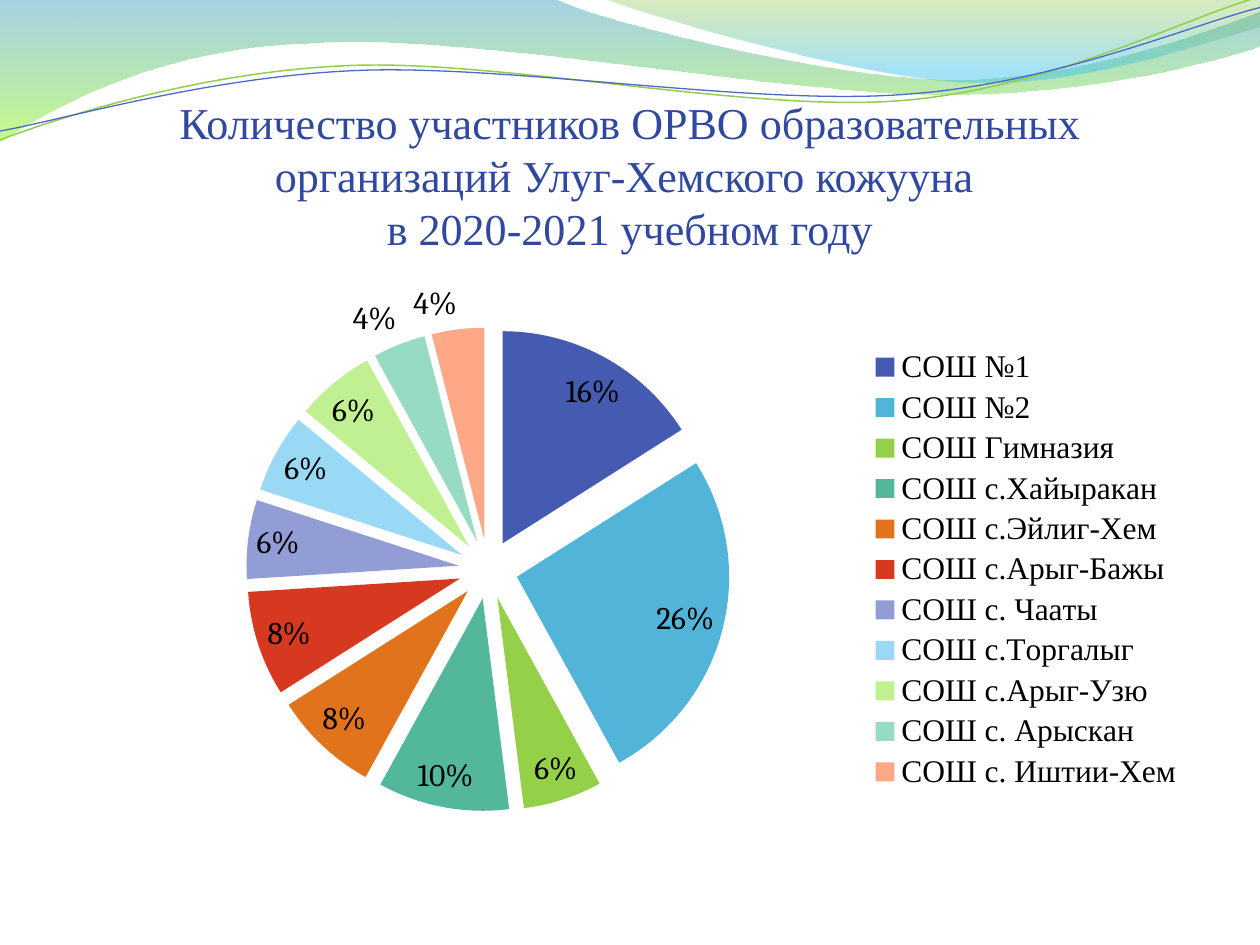
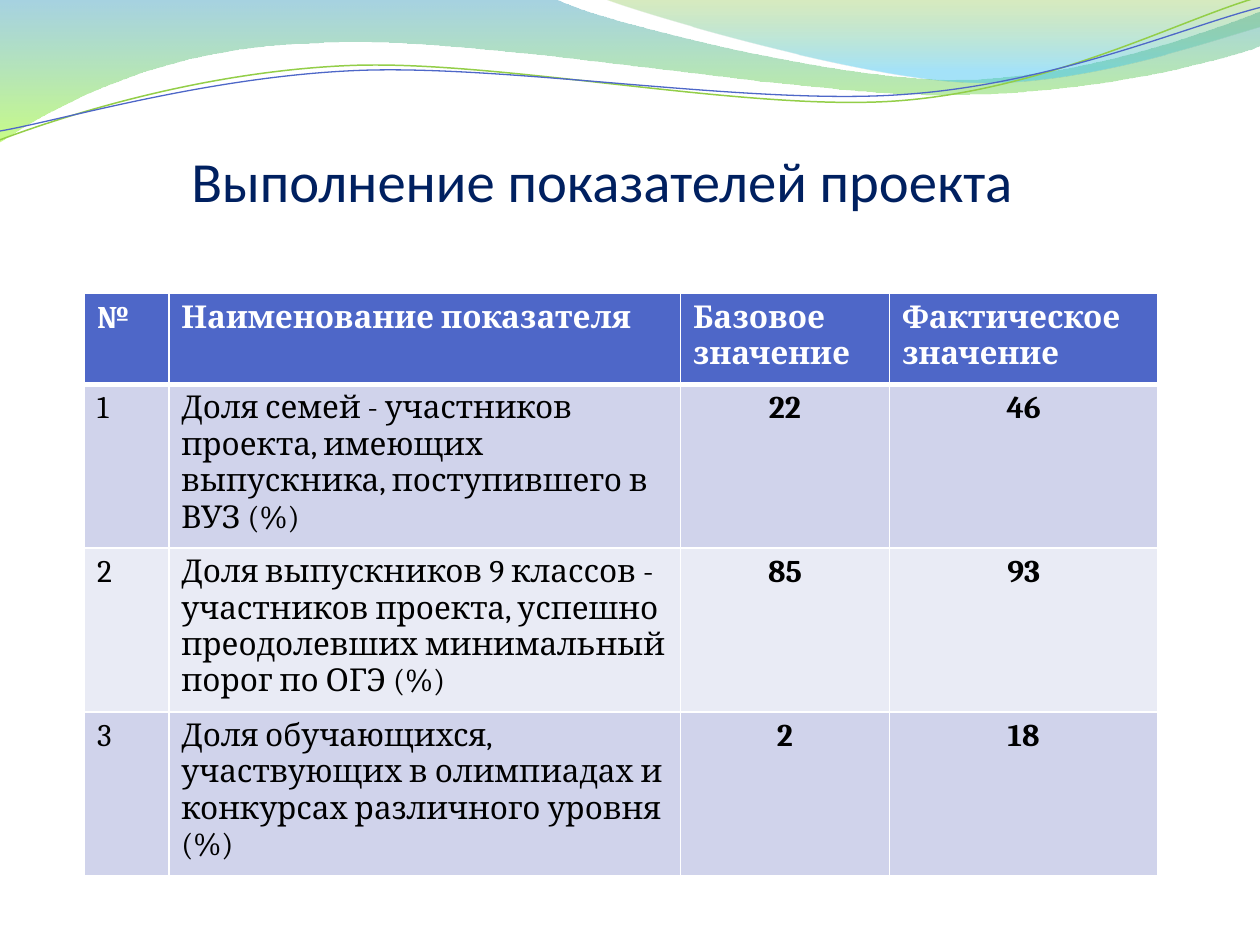
"""Builds two slides on school project results: a pie chart and a table."""
from math import cos, radians, sin
from pptx import Presentation
from pptx.chart.data import CategoryChartData
from pptx.dml.color import RGBColor
from pptx.enum.chart import XL_CHART_TYPE, XL_LABEL_POSITION, XL_LEGEND_POSITION
from pptx.enum.text import MSO_ANCHOR, PP_ALIGN
from pptx.oxml import parse_xml
from pptx.oxml.ns import nsdecls, qn
from pptx.util import Inches, Pt

PIE = XL_CHART_TYPE.PIE_EXPLODED
FIT = XL_LABEL_POSITION.BEST_FIT
RIGHT = XL_LEGEND_POSITION.RIGHT
LOW = MSO_ANCHOR.BOTTOM
LEFT, MID = PP_ALIGN.LEFT, PP_ALIGN.CENTER

WIDE, HIGH = 10, 7.5
SERIF, TIMES, SANS = "Cambria", "Times New Roman", "Calibri"
WHITE, BLACK, BLUE = "FFFFFF", "000000", "4E67C8"
BANDS = ("D0D3EB", "E9EBF5")
TILT = 2.7

# Each wave is a start point, then line ends (2 numbers) and curves (6 numbers).
WAVES = [
    {"parts": [(0, 0), (4.4, -.01), (4.76, .17, 6.64, .63, 7.58, .63),
               (8.53, .63, 9.58, .26, 10, .09), (10.01, .36),
               (9.83, .44, 8.7, .76, 7.46, .75),
               (6.22, .75, 3.82, .28, 2.57, .34),
               (1.29, .36, .46, .83, -.01, 1.13), (0, 0)],
     "fade": [(0, "3B9CBF", 45), (100, "9CFA24", 55)]},
    {"parts": [(4.79, -.01), (5.09, .11, 6.82, .62, 7.69, .65),
               (8.56, .69, 9.61, .32, 10, .21), (10, 0), (4.79, -.01)],
     "fade": [(0, "7EBE2C", 30), (80, "39C1F1", 45)]},
    {"parts": [(0, 1.11), (.48, .93, 1.58, .57, 2.77, .52),
               (3.95, .47, 5.93, .89, 7.13, .8),
               (8.33, .71, 9.38, .15, 9.98, -.02)],
     "line": ("93CE48", .85), "hub": (4.99, .57)},
    {"parts": [(0, 1.04), (.47, .96, 1.64, .61, 2.83, .56),
               (4.03, .51, 5.97, .84, 7.17, .75),
               (8.36, .67, 9.41, .21, 10, .06)],
     "line": (BLUE, .75), "hub": (5, .59)},
]

HEADS = [
    {"lines": ["Количество участников ОРВО образовательных "
               "организаций Улуг-Хемского кожууна ", "в 2020-2021 учебном году"],
     "box": (.5, .77, 9, 1.25), "font": (TIMES, 25.2, "31489F")},
    {"lines": ["Выполнение показателей проекта"],
     "box": (.28, 1.07, 9, .63), "font": (SANS, 32.4, "002060")},
]

SHARES = [
    ("СОШ №1", 16, "455BB1"), ("СОШ №2", 26, "53B4D9"),
    ("СОШ Гимназия", 6, "94D149"), ("СОШ с.Хайыракан", 10, "53B79B"),
    ("СОШ с.Эйлиг-Хем", 8, "E2731D"), ("СОШ с.Арыг-Бажы", 8, "D63820"),
    ("СОШ с. Чааты", 6, "929CD5"), ("СОШ с.Торгалыг", 6, "9AD9F6"),
    ("СОШ с.Арыг-Узю", 6, "C0F092"), ("СОШ с. Арыскан", 4, "98DBC5"),
    ("СОШ с. Иштии-Хем", 4, "FFA888"),
]
PLOT = {"x": .16, "y": .1, "w": .43, "h": .8}

ROWS = [
    ("№", "Наименование показателя", "Базовое значение", "Фактическое значение"),
    ("1", "Доля семей - участников проекта, имеющих выпускника, "
          "поступившего в ВУЗ (%)", "22", "46"),
    ("2", "Доля выпускников 9 классов - участников проекта, успешно "
          "преодолевших минимальный порог по ОГЭ (%)", "85", "93"),
    ("3", "Доля обучающихся, участвующих в олимпиадах и конкурсах "
          "различного уровня (%)", "2", "18"),
]
GRID = (.67, 2.33, 8.52, 4.02)
COLS = (.67, 4.06, 1.66, 2.13)
TALL = (.72, .88, 1.14, .88)


def hue(code):
    return RGBColor.from_string(code)


def style(font, face, size, code, bold=False):
    font.name, font.size, font.bold = face, Pt(size), bold
    font.color.rgb = hue(code)


def turn(point, hub):
    """Turns a point clockwise about the hub by the tilt."""
    x, y = point[0] - hub[0], point[1] - hub[1]
    c, s = cos(radians(TILT)), sin(radians(TILT))
    return hub[0] + x * c - y * s, hub[1] + x * s + y * c


def trace(slide, wave):
    """Draws a wave through its control points, then bends the curves."""
    parts, hub = wave["parts"], wave.get("hub")
    pts = [part[i:i + 2] for part in parts for i in range(0, len(part), 2)]
    if hub:
        pts = [turn(point, hub) for point in pts]
    pts = [(Inches(x), Inches(y)) for x, y in pts]
    pen = slide.shapes.build_freeform(*pts[0], scale=1.0)
    pen.add_line_segments(pts[1:], close=not hub)
    shape = pen.convert_to_shape()
    steps = iter(list(shape.element.iter(qn("a:lnTo"))))
    for part in parts[1:]:
        group = [next(steps) for _ in range(len(part) // 2)]
        if len(group) == 3:
            bend = parse_xml(f'<a:cubicBezTo {nsdecls("a")}/>')
            group[0].addprevious(bend)
            for step in group:
                bend.append(step[0])
                step.getparent().remove(step)
    if hub:
        shape.rotation = 360 - TILT
    return shape


def fade(stops):
    marks = "".join(
        f'<a:gs pos="{at * 1000}"><a:srgbClr val="{code}">'
        f'<a:alpha val="{alpha * 1000}"/></a:srgbClr></a:gs>'
        for at, code, alpha in stops)
    return parse_xml(f'<a:gradFill {nsdecls("a")}><a:gsLst>{marks}</a:gsLst>'
                     '<a:lin ang="5400000" scaled="0"/></a:gradFill>')


def add_waves(slide, layout):
    """Draws the waves and moves them to the layout that the slides share."""
    for wave in WAVES:
        shape = trace(slide, wave)
        shape.shadow.inherit = False
        shape.fill.background()
        if "fade" in wave:
            shape.line.fill.background()
            blank = shape.element.spPr.find(qn("a:noFill"))
            shape.element.spPr.replace(blank, fade(wave["fade"]))
        else:
            code, width = wave["line"]
            shape.line.color.rgb, shape.line.width = hue(code), Pt(width)
        layout.shapes.element.append(shape.element)


def add_head(slide, head):
    frame = slide.shapes.add_textbox(*map(Inches, head["box"])).text_frame
    frame.word_wrap, frame.vertical_anchor = True, LOW
    frame.margin_left = frame.margin_right = frame.margin_bottom = 0
    para = frame.paragraphs[0]
    para.alignment = MID
    for n, line in enumerate(head["lines"]):
        if n:
            para.add_line_break()
        run = para.add_run()
        run.text = line
        style(run.font, *head["font"])


def add_pie(slide):
    data = CategoryChartData()
    data.categories = [name for name, _, _ in SHARES]
    data.add_series("Series 1", [value for _, value, _ in SHARES])
    chart = slide.shapes.add_chart(
        PIE, *map(Inches, (.5, 2.12, 9, 4.8)), data).chart
    chart.has_title = False
    style(chart.font, SERIF, 18, BLACK)
    chart.has_legend = True
    chart.legend.position, chart.legend.include_in_layout = RIGHT, False
    style(chart.legend.font, TIMES, 18, BLACK)

    plot = chart.plots[0]
    plot.vary_by_categories = plot.has_data_labels = True
    tags = plot.data_labels
    tags.show_percentage, tags.show_value = True, False
    tags.number_format, tags.number_format_is_linked = "0%", False
    tags.position = FIT
    style(tags.font, SERIF, 18, BLACK)

    ser = plot.series[0]
    root = ser._element
    for old in root.findall(qn("c:explosion")):
        root.remove(old)
    root.find(qn("c:tx")).addnext(
        parse_xml(f'<c:explosion {nsdecls("c")} val="14"/>'))
    for n, (_, _, code) in enumerate(SHARES):
        look = ser.points[n].format
        look.fill.solid()
        look.fill.fore_color.rgb = hue(code)
        look.line.fill.background()

    area = chart.element.find(".//" + qn("c:plotArea"))
    for old in area.findall(qn("c:layout")):
        area.remove(old)
    spots = "".join(f'<c:{key} val="{val}"/>' for key, val in PLOT.items())
    area.insert(0, parse_xml(
        f'<c:layout {nsdecls("c")}><c:manualLayout><c:layoutTarget val="inner"/>'
        f'<c:xMode val="edge"/><c:yMode val="edge"/>{spots}'
        '</c:manualLayout></c:layout>'))


def edge(cell, widths):
    """Sets white borders, given as points for left, right, top and bottom."""
    props = cell._tc.get_or_add_tcPr()
    for n, (side, width) in enumerate(zip("LRTB", widths)):
        props.insert(n, parse_xml(
            f'<a:ln{side} {nsdecls("a")} w="{Pt(width)}"><a:solidFill>'
            f'<a:srgbClr val="{WHITE}"/></a:solidFill></a:ln{side}>'))


def add_grid(slide):
    frame = slide.shapes.add_table(len(ROWS), len(COLS), *map(Inches, GRID))
    table = frame.table
    for col, width in zip(table.columns, COLS):
        col.width = Inches(width)
    for r, (texts, tall) in enumerate(zip(ROWS, TALL)):
        table.rows[r].height = Inches(tall)
        for c, text in enumerate(texts):
            cell = table.cell(r, c)
            cell.fill.solid()
            cell.fill.fore_color.rgb = hue(BANDS[(r - 1) % 2] if r else BLUE)
            edge(cell, (1, 1, 3 if r == 1 else 1, 1 if r else 3))
            para = cell.text_frame.paragraphs[0]
            para.alignment = MID if r and c > 1 else LEFT
            run = para.add_run()
            run.text = text
            style(run.font, SERIF, 18, BLACK if r else WHITE, not r or c > 1)
    frame.height = Inches(GRID[3])


def main():
    deck = Presentation()
    deck.slide_width, deck.slide_height = Inches(WIDE), Inches(HIGH)
    blank = deck.slide_layouts[6]
    for head, fill in zip(HEADS, (add_pie, add_grid)):
        slide = deck.slides.add_slide(blank)
        if len(deck.slides) == 1:
            add_waves(slide, blank)
        add_head(slide, head)
        fill(slide)
    deck.save("out.pptx")


if __name__ == "__main__":
    main()
